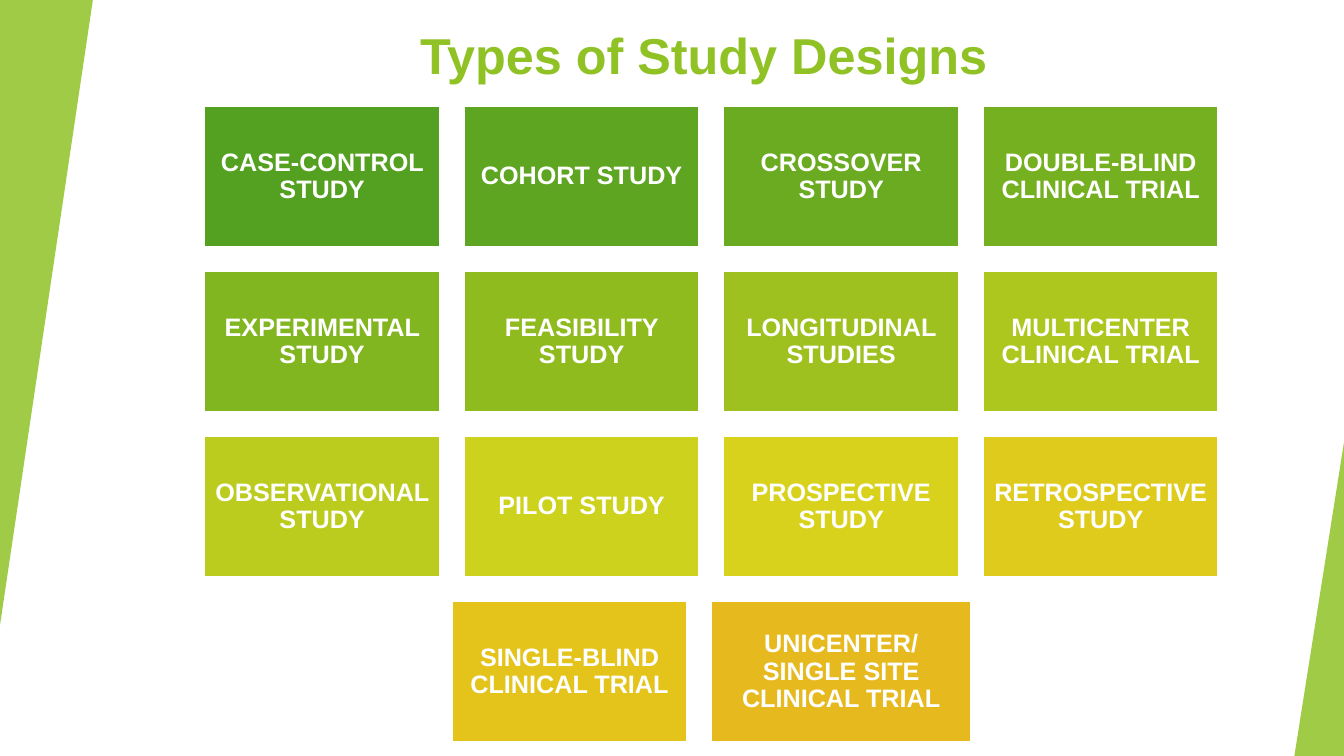
from lxml.etree import SubElement
from pptx import Presentation
from pptx.dml.color import RGBColor
from pptx.enum.shapes import MSO_SHAPE
from pptx.enum.text import MSO_ANCHOR, PP_ALIGN
from pptx.oxml.ns import qn
from pptx.util import Cm, Pt

WHITE = RGBColor(0xFF, 0xFF, 0xFF)
LIME = RGBColor(0x90, 0xC2, 0x26)

TITLE = "Types of Study Designs"
DESIGN_ROWS = [
    [("CASE-CONTROL STUDY", "54A021"), ("COHORT STUDY", "5EA521"),
     ("CROSSOVER STUDY", "6AAB21"), ("DOUBLE-BLIND CLINICAL TRIAL", "75B020")],
    [("EXPERIMENTAL STUDY", "82B620"), ("FEASIBILITY STUDY", "8FBB1F"),
     ("LONGITUDINAL STUDIES", "9EC11F"), ("MULTICENTER CLINICAL TRIAL", "ADC71E")],
    [("OBSERVATIONAL STUDY", "BCCC1E"), ("PILOT STUDY", "CDD21D"),
     ("PROSPECTIVE STUDY", "D8D21C"), ("RETROSPECTIVE STUDY", "DECB1C")],
    [("SINGLE-BLIND CLINICAL TRIAL", "E4C31B"),
     ("UNICENTER/SINGLE SITE CLINICAL TRIAL", "E6B91E")],
]
WIDER_CARDS = {"UNICENTER/SINGLE SITE CLINICAL TRIAL": 6.55}

# Lengths in centimetres
SLIDE_W, SLIDE_H = 33.87, 19.05
CARD_W, CARD_H, GAP = 5.94, 3.56, 0.6
GRID_CENTER, GRID_TOP = 17.93, 2.67
TITLE_BOX = (3.58, 0.36, 28.32, 2.31)
WEDGES = [((0, 0, 2.34, 15.75), 180), ((32.62, 11.15, 1.25, 7.9), 0)]

TITLE_FRAME = {"word_wrap": True, "vertical_anchor": MSO_ANCHOR.TOP,
               "margin_top": Cm(0.25)}
CARD_FRAME = {"word_wrap": True, "vertical_anchor": MSO_ANCHOR.MIDDLE,
              "margin_left": Cm(0.18), "margin_right": Cm(0.18),
              "margin_top": Cm(0.18), "margin_bottom": Cm(0.18)}
TITLE_FONT = {"name": "Arial", "size": Pt(36), "bold": True}
CARD_FONT = {"name": "Arial", "size": Pt(18), "bold": True}


def set_all(target, values):
    for name, value in values.items():
        setattr(target, name, value)


def write(shape, text, frame_values, font_values, color, line_spacing=1.0):
    frame = shape.text_frame
    set_all(frame, frame_values)
    paragraph = frame.paragraphs[0]
    set_all(paragraph, {"alignment": PP_ALIGN.CENTER, "line_spacing": line_spacing})
    run = paragraph.add_run()
    run.text = text
    set_all(run.font, font_values)
    run.font.color.rgb = color


def add_filled(slide, preset, box, color):
    shape = slide.shapes.add_shape(preset, *map(Cm, box))
    shape.shadow.inherit = False
    shape.fill.solid()
    shape.fill.fore_color.rgb = color
    return shape


def add_wedge(slide, box, rotation):
    wedge = add_filled(slide, MSO_SHAPE.ISOSCELES_TRIANGLE, box, LIME)
    wedge.adjustments[0] = 1
    wedge.rotation = rotation
    wedge.line.fill.background()
    color = wedge.fill._xPr.find(qn("a:solidFill"))[0]
    SubElement(color, qn("a:alpha"), val="85000")


def add_card(slide, label, color, box):
    card = add_filled(slide, MSO_SHAPE.RECTANGLE, box, RGBColor.from_string(color))
    card.line.color.rgb = WHITE
    card.line.width = Pt(1.5)
    write(card, label, CARD_FRAME, CARD_FONT, WHITE, line_spacing=0.9)


def add_card_rows(slide):
    """Stack the rows, centring each one on the grid."""
    for row, designs in enumerate(DESIGN_ROWS):
        widths = [WIDER_CARDS.get(label, CARD_W) for label, _ in designs]
        left = GRID_CENTER - (sum(widths) + GAP * (len(widths) - 1)) / 2
        top = GRID_TOP + row * (CARD_H + GAP)
        for (label, color), width in zip(designs, widths):
            add_card(slide, label, color, (left, top, width, CARD_H))
            left += width + GAP


def main():
    deck = Presentation()
    deck.slide_width, deck.slide_height = Cm(SLIDE_W), Cm(SLIDE_H)
    slide = deck.slides.add_slide(deck.slide_layouts[6])
    slide.background.fill.solid()
    slide.background.fill.fore_color.rgb = WHITE

    heading = slide.shapes.add_textbox(*map(Cm, TITLE_BOX))
    write(heading, TITLE, TITLE_FRAME, TITLE_FONT, LIME)
    for box, rotation in WEDGES:
        add_wedge(slide, box, rotation)
    add_card_rows(slide)
    deck.save("out.pptx")


if __name__ == "__main__":
    main()
